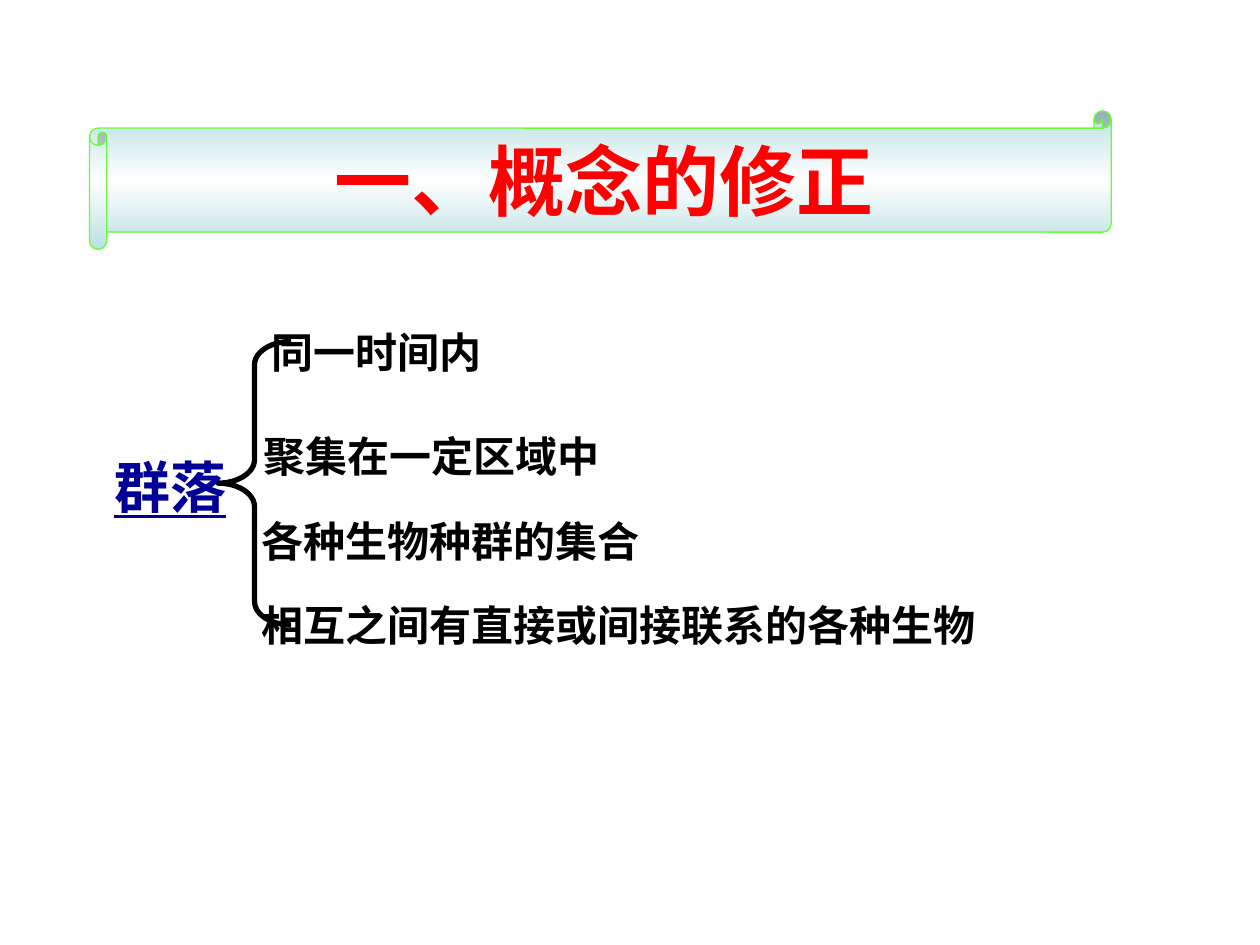
from copy import deepcopy

from pptx import Presentation
from pptx.dml.color import RGBColor
from pptx.enum.shapes import MSO_SHAPE
from pptx.enum.text import MSO_ANCHOR, MSO_AUTO_SIZE, PP_ALIGN
from pptx.util import Inches, Pt

THEME = dict(
    font="Arial", title_size=44, term_size=32, item_size=24,
    title="FF0000", term="000099", ink="000000",
    scroll_line="66FF33", scroll_stops=[(0, "BBE0E3"), (0.5, "FFFFFF"), (1, "BBE0E3")],
)

TITLE = "一、概念的修正"
TERM = ("群落", (0.81, 3.54, 1.33, 0.63))
# Text, box, wrap
ITEMS = [
    ("同一时间内", (2.06, 2.54, 2.44, 0.5), True),
    ("聚集在一定区域中", (1.99, 3.37, 2.87, 0.5), False),
    ("各种生物种群的集合", (1.98, 4.04, 4.17, 0.5), True),
    ("相互之间有直接或间接联系的各种生物", (1.98, 4.71, 6.42, 0.5), True),
]
SCROLL_BOX = (0.71, 0.88, 8.11, 1.1)
BRACE_BOX = (1.73, 2.71, 0.58, 2.25)


def rgb(name):
    return RGBColor.from_string(THEME.get(name, name))


def write(tf, text, size, color, align=PP_ALIGN.LEFT, underline=None, wrap=True):
    tf.word_wrap = wrap
    p = tf.paragraphs[0]
    p.alignment = align
    r = p.add_run()
    r.text = text
    r.font.name = THEME["font"]
    r.font.size = Pt(THEME[size])
    r.font.bold = True
    r.font.underline = underline
    r.font.color.rgb = rgb(color)


def add_text(s, text, box, size, color, **fmt):
    tf = s.shapes.add_textbox(*map(Inches, box)).text_frame
    write(tf, text, size, color, **fmt)
    tf.auto_size = MSO_AUTO_SIZE.SHAPE_TO_FIT_TEXT


def add_outline(s, kind, box, adjustments, color, width):
    """Add a preset shape with a plain line and no shadow."""
    sp = s.shapes.add_shape(kind, *map(Inches, box))
    sp.shadow.inherit = False
    for i, value in enumerate(adjustments):
        sp.adjustments[i] = value
    sp.line.color.rgb = rgb(color)
    sp.line.width = Pt(width)
    return sp


def fill_gradient(sp, stops, angle):
    sp.fill.gradient()
    sp.fill.gradient_angle = angle
    gs_list = sp._element.spPr.xpath("./a:gradFill/a:gsLst")[0]
    while len(gs_list) < len(stops):
        gs_list.append(deepcopy(gs_list[0]))
    for stop, (position, color) in zip(sp.fill.gradient_stops, stops):
        stop.position = position
        stop.color.rgb = rgb(color)


def main():
    prs = Presentation()
    prs.slide_width, prs.slide_height = Inches(10), Inches(7.5)
    s = prs.slides.add_slide(prs.slide_layouts[6])

    scroll = add_outline(s, MSO_SHAPE.HORIZONTAL_SCROLL, SCROLL_BOX, [0.125], "scroll_line", 0.75)
    fill_gradient(scroll, THEME["scroll_stops"], 90)
    scroll.text_frame.vertical_anchor = MSO_ANCHOR.MIDDLE
    write(scroll.text_frame, TITLE, "title_size", "title", align=PP_ALIGN.CENTER, wrap=False)

    brace = add_outline(s, MSO_SHAPE.LEFT_BRACE, BRACE_BOX, [0.32, 0.5], "ink", 3)
    brace.fill.background()

    for text, box, wrap in ITEMS:
        align = PP_ALIGN.LEFT if wrap else PP_ALIGN.CENTER
        add_text(s, text, box, "item_size", "ink", align=align, wrap=wrap)
    add_text(s, *TERM, "term_size", "term", underline=True)

    prs.save("out.pptx")


if __name__ == "__main__":
    main()
